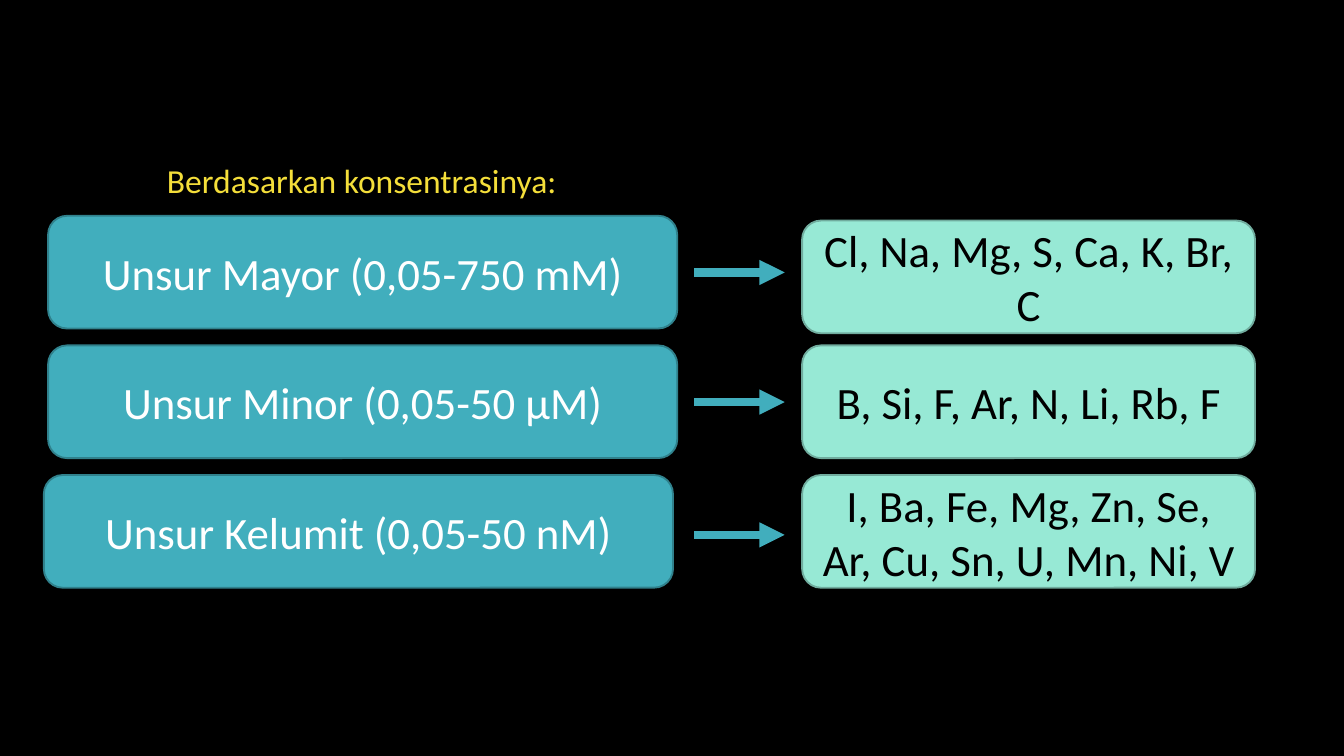
from lxml import etree
from pptx import Presentation
from pptx.dml.color import RGBColor
from pptx.enum.shapes import MSO_CONNECTOR, MSO_SHAPE
from pptx.enum.text import MSO_ANCHOR, PP_ALIGN
from pptx.oxml.ns import qn
from pptx.util import Cm, Pt

ROUNDED = MSO_SHAPE.ROUNDED_RECTANGLE
STRAIGHT = MSO_CONNECTOR.STRAIGHT
MIDDLE = MSO_ANCHOR.MIDDLE
CENTER = PP_ALIGN.CENTER

TEAL = "41AEBD"
BOX_HEIGHT = 2.13


def rgb(value):
    return RGBColor.from_string(value)


def write(sp, text, size, color):
    """Put one centred, wrapped run of text in a shape."""
    tf = sp.text_frame
    tf.word_wrap = True
    p = tf.paragraphs[0]
    p.alignment = CENTER
    r = p.add_run()
    r.text = text
    r.font.name = "Calibri"
    r.font.size = Pt(size)
    r.font.color.rgb = rgb(color)


prs = Presentation()
prs.slide_width = Cm(25.4)
prs.slide_height = Cm(14.29)
s = prs.slides.add_slide(prs.slide_layouts[6])
s.background.fill.solid()
s.background.fill.fore_color.rgb = rgb("000000")

heading = s.shapes.add_textbox(Cm(1.24), Cm(2.9), Cm(11.2), Cm(1.02))
write(heading, "Berdasarkan konsentrasinya:", 18, "F4DE3A")

# Group, its left and top, arrow height, elements, their top
rows = [
    ("Unsur Mayor (0,05-750 mM)", 0.91, 4.08, 5.15,
     "Cl, Na, Mg, S, Ca, K, Br, C", 4.17),
    ("Unsur Minor (0,05-50 µM)", 0.91, 6.53, 7.6,
     "B, Si, F, Ar, N, Li, Rb, F", 6.53),
    ("Unsur Kelumit (0,05-50 nM)", 0.83, 8.98, 10.11,
     "I, Ba, Fe, Mg, Zn, Se, Ar, Cu, Sn, U, Mn, Ni, V", 8.98),
]

for group, left, top, arrow_y, elements, elements_top in rows:
    boxes = [
        (group, left, top, 11.89, TEAL, "30818C", "FFFFFF"),
        (elements, 15.16, elements_top, 8.56, "97E9D5", "70AC9E", "000000"),
    ]
    for text, x, y, width, fill, line, color in boxes:
        sp = s.shapes.add_shape(ROUNDED, Cm(x), Cm(y), Cm(width), Cm(BOX_HEIGHT))
        sp.shadow.inherit = False
        sp.fill.solid()
        sp.fill.fore_color.rgb = rgb(fill)
        sp.line.color.rgb = rgb(line)
        sp.line.width = Pt(1)
        sp.text_frame.vertical_anchor = MIDDLE
        write(sp, text, 24, color)

    arrow = s.shapes.add_connector(
        STRAIGHT, Cm(13.12), Cm(arrow_y), Cm(14.83), Cm(arrow_y))
    arrow.line.color.rgb = rgb(TEAL)
    arrow.line.width = Pt(4.5)
    etree.SubElement(arrow.line._get_or_add_ln(), qn("a:tailEnd"), type="triangle")
    etree.SubElement(arrow._element.spPr, qn("a:effectLst"))

prs.save("out.pptx")
